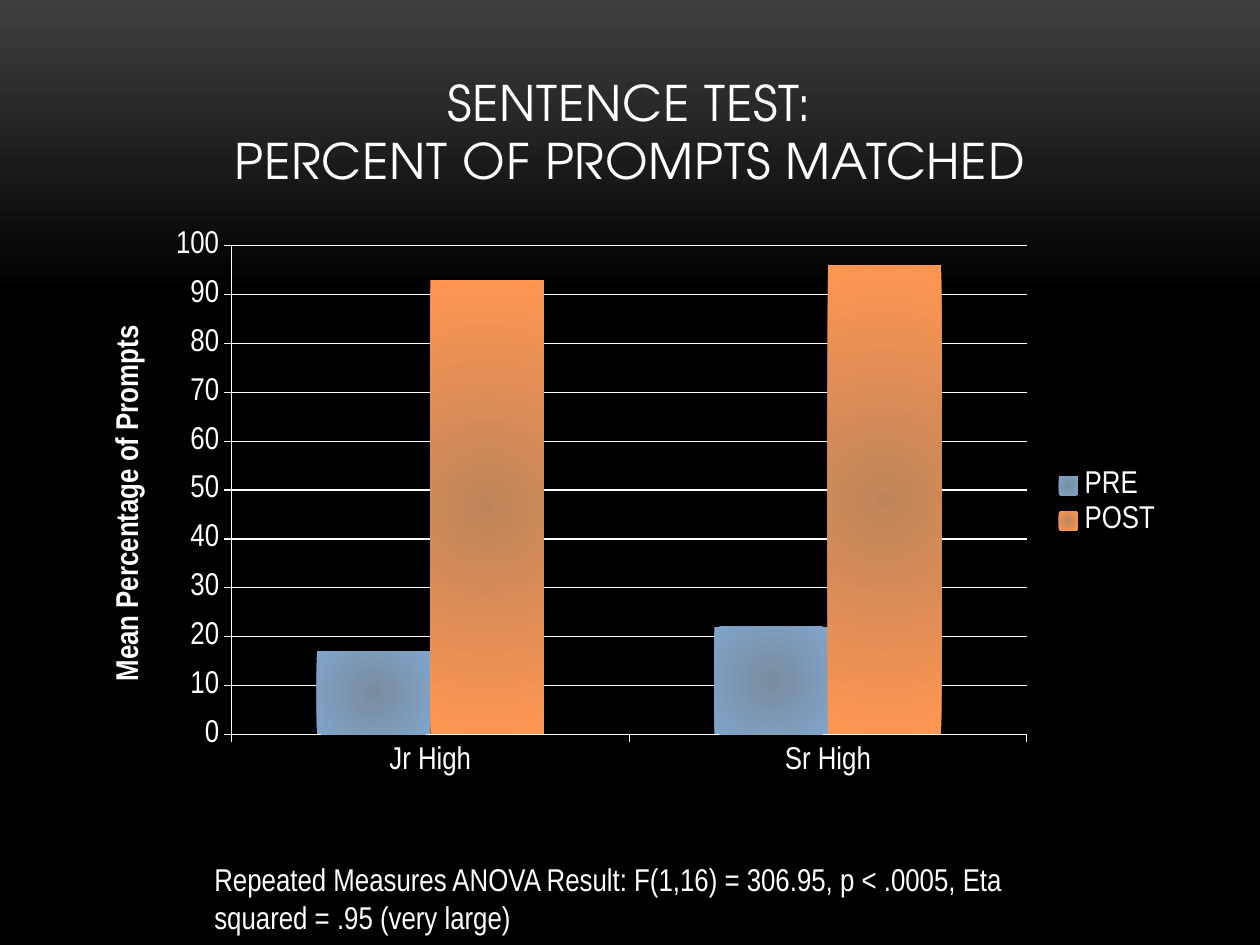
from lxml import etree
from pptx import Presentation
from pptx.chart.data import CategoryChartData
from pptx.dml.color import RGBColor
from pptx.enum.chart import XL_CHART_TYPE, XL_LEGEND_POSITION, XL_TICK_MARK
from pptx.enum.text import MSO_ANCHOR, PP_ALIGN
from pptx.oxml.ns import qn
from pptx.util import Pt

PX = 914400 / 126
COLUMNS = XL_CHART_TYPE.COLUMN_CLUSTERED
RIGHT = XL_LEGEND_POSITION.RIGHT
OUTSIDE = XL_TICK_MARK.OUTSIDE
BOTTOM = MSO_ANCHOR.BOTTOM
CENTER = PP_ALIGN.CENTER
TITLE_FONT = "TeX Gyre Adventor"
BODY_FONT = "Arial Narrow"
COLORS = {
    "white": "FFFFFF",
    "black": "000000",
    "charcoal": "3F3F3F",
    "pre center": "788C9F",
    "pre edge": "80A5CB",
    "post center": "BF855A",
    "post edge": "FF9652",
}


def px(*lengths):
    return [round(n * PX) for n in lengths]


def style(font, size, name=BODY_FONT, bold=False):
    font.size = Pt(size)
    font.name = name
    font.bold = bold
    font.color.rgb = RGBColor.from_string(COLORS["white"])


prs = Presentation()
prs.slide_width, prs.slide_height = px(1260, 945)
s = prs.slides.add_slide(prs.slide_layouts[6])

# Background
fill = s.background.fill
fill.gradient()
fill.gradient_angle = 270
for stop, color, position in zip(fill.gradient_stops, ("charcoal", "black"), (0, 0.31)):
    stop.color.rgb = RGBColor.from_string(COLORS[color])
    stop.position = position

# Title
tf = s.shapes.add_textbox(*px(84, 38, 1092, 158)).text_frame
tf.word_wrap = True
tf.vertical_anchor = BOTTOM
p = tf.paragraphs[0]
p.alignment = CENTER
for i, line in enumerate(("SENTENCE TEST:", "PERCENT OF PROMPTS MATCHED")):
    if i:
        p.add_line_break()
    r = p.add_run()
    r.text = line
    style(r.font, 28, TITLE_FONT)
    r.font._element.set("spc", "50")

# Chart
data = CategoryChartData()
data.categories = ["Jr High", "Sr High"]
data.add_series("PRE", (17, 22))
data.add_series("POST", (93, 96))
chart = s.shapes.add_chart(COLUMNS, *px(84, 220, 1092, 567), data).chart
style(chart.font, 18)
chart.has_title = False
chart.has_legend = True
chart.legend.position = RIGHT
chart.legend.include_in_layout = False

values = chart.value_axis
values.minimum_scale, values.maximum_scale, values.major_unit = 0, 100, 10
values.has_major_gridlines = True
p = values.axis_title.text_frame.paragraphs[0]
r = p.add_run()
r.text = "Mean Percentage of Prompts"
style(r.font, 18, bold=True)
for axis in (chart.category_axis, values):
    axis.major_tick_mark = OUTSIDE
for line in (chart.category_axis.format.line, values.format.line,
             values.major_gridlines.format.line):
    line.color.rgb = RGBColor.from_string(COLORS["white"])
    line.width = Pt(0.75)

plot = chart.plots[0]
plot.gap_width = 150
plot.overlap = 0
plot.vary_by_categories = False
for series in plot.series:
    fill = series.format.fill
    fill.gradient()
    for stop, part, position in zip(fill.gradient_stops, ("center", "edge"), (0, 1)):
        stop.color.rgb = RGBColor.from_string(COLORS[f"{series.name.lower()} {part}"])
        stop.position = position
    # Turn the linear gradient into one that spreads from the middle
    grad = series.format._element.spPr.find(qn("a:gradFill")) if hasattr(
        series.format._element, "spPr") else series._element.spPr.find(qn("a:gradFill"))
    grad.remove(grad.find(qn("a:lin")))
    path = etree.SubElement(grad, qn("a:path"), path="circle")
    etree.SubElement(path, qn("a:fillToRect"), l="50000", t="50000", r="50000", b="50000")

# Test result
tf = s.shapes.add_textbox(*px(202, 854, 883, 89)).text_frame
tf.word_wrap = True
r = tf.paragraphs[0].add_run()
r.text = ("Repeated Measures ANOVA Result: F(1,16) = 306.95, p < .0005, "
          "Eta squared = .95 (very large)")
style(r.font, 18)

prs.save("out.pptx")
